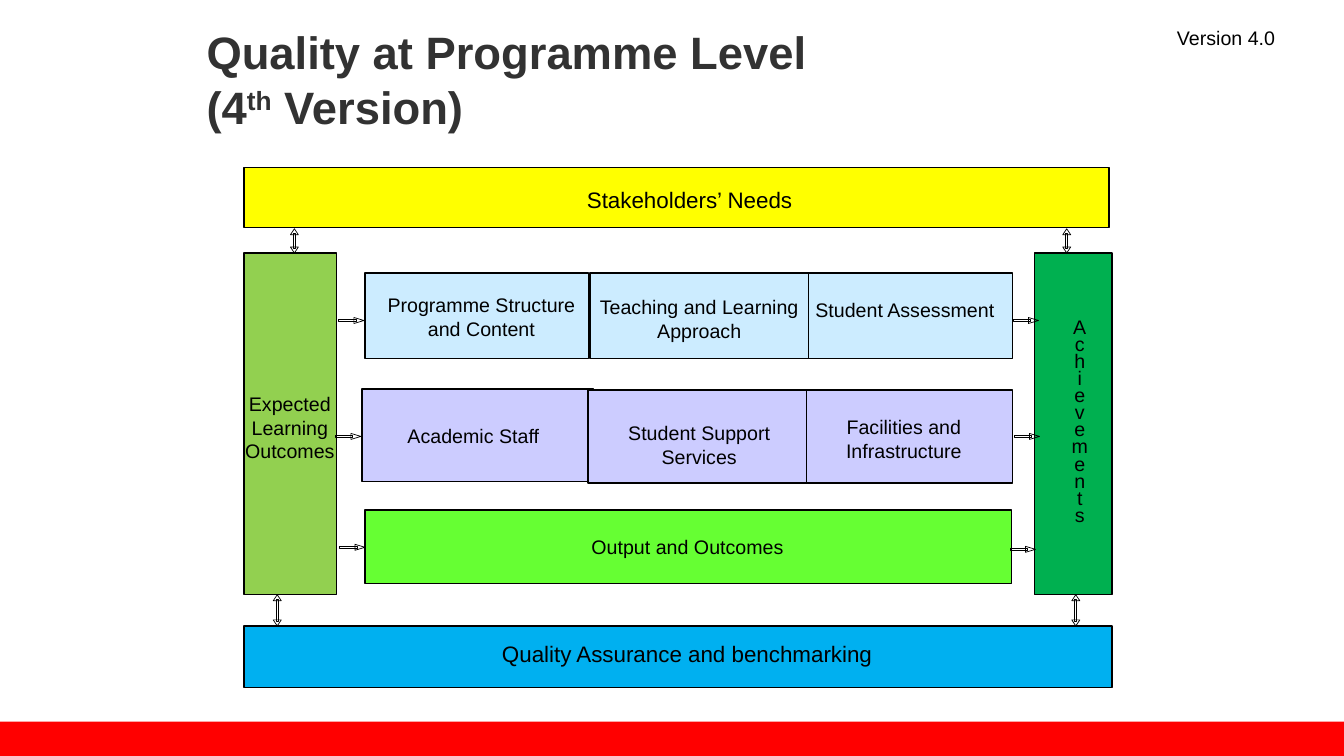
import pptx
import pptx.dml.color
import pptx.enum.shapes
import pptx.enum.text
import pptx.util
from pptx.util import Inches

ALIGN = pptx.enum.text.PP_ALIGN
ANCHOR = pptx.enum.text.MSO_ANCHOR


def colour(value):
    return pptx.dml.color.RGBColor.from_string(value)


def add_box(page, left, top, width, height, fill, line="000000"):
    box = page.shapes.add_shape(
        pptx.enum.shapes.MSO_SHAPE.RECTANGLE,
        Inches(left), Inches(top), Inches(width), Inches(height))
    box.shadow.inherit = False
    box.fill.solid()
    box.fill.fore_color.rgb = colour(fill)
    if line:
        box.line.color.rgb = colour(line)
        box.line.width = pptx.util.Pt(1)
    else:
        box.line.fill.background()


def add_span(para, text, size, color, bold, raised=False):
    span = para.add_run()
    span.text = text
    span.font.name = "Arial"
    span.font.size = pptx.util.Pt(size)
    span.font.bold = bold
    span.font.color.rgb = colour(color)
    if raised:
        span.font._element.set("baseline", "30000")


def add_text(page, text, left, top, width, height, size=14, color="000000",
             bold=False, align=ALIGN.CENTER, anchor=ANCHOR.TOP, wrap=True,
             margins=(0, 0)):
    """Write text; a newline breaks the line and ^...^ raises a part."""
    box = page.shapes.add_textbox(
        Inches(left), Inches(top), Inches(width), Inches(height))
    frame = box.text_frame
    frame.word_wrap = wrap
    frame.vertical_anchor = anchor
    frame.margin_left = frame.margin_right = Inches(margins[0])
    frame.margin_top = frame.margin_bottom = Inches(margins[1])
    para = frame.paragraphs[0]
    para.alignment = align
    for row, line in enumerate(text.split("\n")):
        if row:
            para.add_line_break()
        for index, part in enumerate(line.split("^")):
            add_span(para, part, size, color, bold, raised=index % 2 == 1)


def add_outline(page, contours):
    """Draw closed contours, given in inches, as one unfilled shape."""
    contours = [[(Inches(x), Inches(y)) for x, y in points]
                for points in contours]
    builder = page.shapes.build_freeform(*contours[0][0])
    for index, points in enumerate(contours):
        if index:
            builder.move_to(*points[0])
        builder.add_line_segments(points[1:], close=True)
    outline = builder.convert_to_shape()
    outline.shadow.inherit = False
    outline.fill.background()
    outline.line.color.rgb = colour("000000")
    outline.line.width = pptx.util.Pt(0.5)


def add_right_arrow(page, left, middle):
    shaft = [(left, middle - 0.01), (left + 0.17, middle - 0.01),
             (left + 0.17, middle + 0.01), (left, middle + 0.01)]
    head = [(left + 0.15, middle - 0.03), (left + 0.25, middle),
            (left + 0.15, middle + 0.03)]
    add_outline(page, [shaft, head])


def add_double_arrow(page, centre, top, bottom):
    shaft = [(centre + 0.01, top + 0.05), (centre + 0.01, bottom - 0.05),
             (centre - 0.01, bottom - 0.05), (centre - 0.01, top + 0.05)]
    heads = [[(centre - 0.04, base), (centre, tip), (centre + 0.04, base)]
             for base, tip in ((top + 0.06, top), (bottom - 0.06, bottom))]
    add_outline(page, [shaft] + heads)


def main():
    deck = pptx.Presentation()
    deck.slide_width, deck.slide_height = Inches(13.33), Inches(7.5)
    page = deck.slides.add_slide(deck.slide_layouts[6])

    # Footer band, title and version
    add_box(page, 0, 7.16, 13.33, 0.34, "FF0000", line=None)
    add_text(page, "Quality at Programme Level\n(4^th^ Version)",
             1.95, 0.29, 9.61, 0.98, size=32.4, color="323232", bold=True,
             align=ALIGN.LEFT, anchor=ANCHOR.MIDDLE, margins=(0.1, 0.05))
    add_text(page, "Version 4.0", 11.35, 0.21, 1.62, 0.34,
             margins=(0.1, 0.05))

    # Top and bottom bars
    add_box(page, 2.42, 1.66, 8.58, 0.6, "FFFF00")
    add_text(page, "Stakeholders’ Needs", 5.81, 1.85, 2.06, 0.27,
             size=16, wrap=False)
    add_box(page, 2.42, 6.21, 8.61, 0.61, "00B0F0")
    add_text(page, "Quality Assurance and benchmarking",
             4.96, 6.35, 3.71, 0.27, size=16, wrap=False)

    # Side columns
    add_box(page, 2.42, 2.51, 0.92, 3.39, "92D050")
    add_text(page, "Expected\nLearning\nOutcomes", 2.43, 3.89, 0.89, 0.71,
             wrap=False)
    add_box(page, 10.26, 2.51, 0.77, 3.39, "00B050")
    for row, letter in enumerate("Achievements"):
        add_text(page, letter, 10.63, 3.12 + 0.17 * row, 0.16, 0.24,
                 wrap=False)

    # Process boxes: left, top, width, height, fill
    for box in (
            (3.62, 2.71, 2.22, 0.85, "CCECFF"),
            (5.85, 2.71, 2.21, 0.85, "CCECFF"),
            (8.02, 2.71, 2.02, 0.85, "CCECFF"),
            (3.59, 3.86, 2.3, 0.92, "CCCCFF"),
            (5.83, 3.87, 2.22, 0.92, "CCCCFF"),
            (8, 3.87, 2.04, 0.92, "CCCCFF"),
            (3.62, 5.06, 6.41, 0.73, "66FF33")):
        add_box(page, *box)

    # Process labels: text, left, top, width, height
    for label in (
            ("Programme Structure and Content", 3.78, 2.91, 1.99, 0.47),
            ("Teaching and Learning Approach", 5.94, 2.93, 1.99, 0.47),
            ("Student Assessment", 7.98, 2.96, 1.99, 0.24),
            ("Academic Staff", 3.7, 4.21, 1.99, 0.24),
            ("Student Support Services", 5.94, 4.18, 1.99, 0.47),
            ("Facilities and Infrastructure", 7.97, 4.12, 1.99, 0.47),
            ("Output and Outcomes", 3.8, 5.31, 6.04, 0.24)):
        add_text(page, *label)

    # Arrows into and out of each process row
    for left, middle in ((3.36, 3.18), (10.05, 3.18), (3.33, 4.33),
                         (10.06, 4.33), (3.37, 5.43), (10.02, 5.45)):
        add_right_arrow(page, left, middle)

    # Arrows between the bars and the columns
    for centre, top, bottom in ((2.92, 2.27, 2.51), (10.58, 2.27, 2.51),
                                (2.75, 5.9, 6.21), (10.67, 5.9, 6.21)):
        add_double_arrow(page, centre, top, bottom)

    deck.save("out.pptx")


if __name__ == "__main__":
    main()
